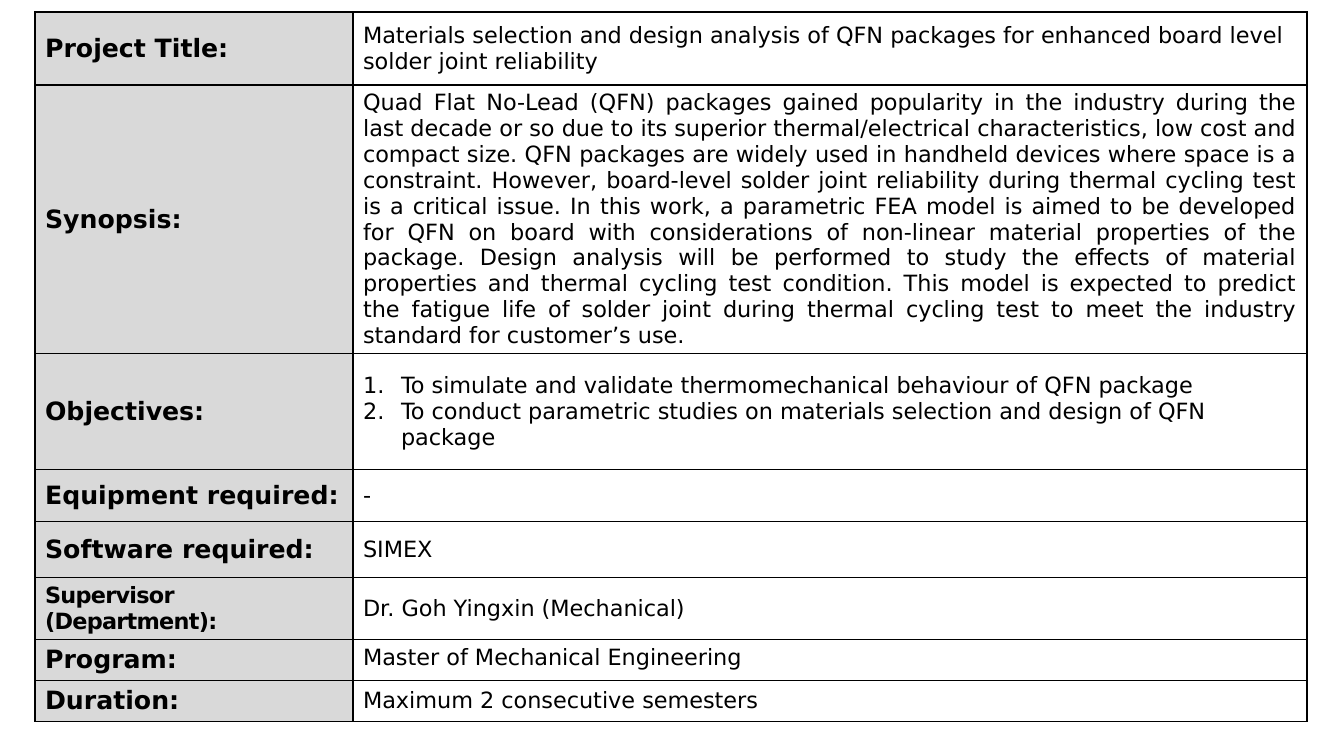
"""Build a one-slide project proposal sheet as a two-column table."""
from lxml import etree
from pptx import Presentation
from pptx.dml.color import RGBColor
from pptx.enum.text import MSO_ANCHOR, PP_ALIGN
from pptx.oxml.ns import qn
from pptx.util import Pt

MIDDLE, TOP = MSO_ANCHOR.MIDDLE, MSO_ANCHOR.TOP
LEFT, JUSTIFY = PP_ALIGN.LEFT, PP_ALIGN.JUSTIFY
PX = 914400 / 100.8
THEME = {
    "font": "DejaVu Sans",
    "ink": "000000",
    "label_fill": "D9D9D9",
    "label_size": 18,
    "body_size": 16,
    "tight": -50,
    "tight_gap": -430,
    "border": 1,
}
SYNOPSIS = (
    "Quad Flat No-Lead (QFN) packages gained popularity in the industry during the last decade or so "
    "due to its superior thermal/electrical characteristics, low cost and compact size. QFN packages "
    "are widely used in handheld devices where space is a constraint. However, board-level solder "
    "joint reliability during thermal cycling test is a critical issue. In this work, a parametric "
    "FEA model is aimed to be developed for QFN on board with considerations of non-linear material "
    "properties of the package. Design analysis will be performed to study the effects of material "
    "properties and thermal cycling test condition. This model is expected to predict the fatigue "
    "life of solder joint during thermal cycling test to meet the industry standard for customer’s use."
)
OBJECTIVES = [
    "To simulate and validate thermomechanical behaviour of QFN package",
    "To conduct parametric studies on materials selection and design of QFN package",
]
ROWS = [
    (73, "Project Title:", ["Materials selection and design analysis of QFN packages "
                            "for enhanced board level solder joint reliability"]),
    (268, "Synopsis:", [SYNOPSIS]),
    (116, "Objectives:", OBJECTIVES),
    (52, "Equipment required:", ["-"]),
    (56, "Software required:", ["SIMEX"]),
    (41, "Supervisor (Department):", ["Dr. Goh Yingxin (Mechanical)"]),
    (41, "Program:", ["Master of Mechanical Engineering"]),
    (41, "Duration:", ["Maximum 2 consecutive semesters"]),
]
COLUMNS = [318, 954]


def px(length):
    """Turn px into EMU."""
    return round(length * PX)


def write_cell(cell, lines, size, bold):
    """Fill a cell with paragraphs and draw its four borders."""
    cell.vertical_anchor = MIDDLE
    cell.text = "\n".join(lines)
    for para in cell.text_frame.paragraphs:
        para.alignment = LEFT
        para.font.name = THEME["font"]
        para.font.size = Pt(size)
        para.font.bold = bold
        para.font.color.rgb = RGBColor.from_string(THEME["ink"])
    properties = cell._tc.get_or_add_tcPr()
    for place, side in enumerate(["a:lnL", "a:lnR", "a:lnT", "a:lnB"]):
        border = etree.Element(qn(side), w=str(Pt(THEME["border"])))
        fill = etree.SubElement(border, qn("a:solidFill"))
        etree.SubElement(fill, qn("a:srgbClr"), val=THEME["ink"])
        properties.insert(place, border)


deck = Presentation()
deck.slide_width, deck.slide_height = px(1344), px(756)
page = deck.slides.add_slide(deck.slide_layouts[6])

heights = [height for height, _, _ in ROWS]
frame = page.shapes.add_table(len(ROWS), len(COLUMNS), px(35), px(12), px(sum(COLUMNS)), px(sum(heights)))
sheet = frame.table
sheet.first_row = sheet.horz_banding = False
for column, width in zip(sheet.columns, COLUMNS):
    column.width = px(width)

for row, (height, label, lines) in enumerate(ROWS):
    sheet.rows[row].height = px(height)
    label_cell, body_cell = sheet.cell(row, 0), sheet.cell(row, 1)
    write_cell(label_cell, [label], THEME["label_size"], True)
    label_cell.fill.solid()
    label_cell.fill.fore_color.rgb = RGBColor.from_string(THEME["label_fill"])
    write_cell(body_cell, lines, THEME["body_size"], False)
    body_cell.fill.background()

    if label == "Synopsis:":
        body_cell.text_frame.paragraphs[0].alignment = JUSTIFY
    elif label == "Objectives:":
        for para in body_cell.text_frame.paragraphs:
            layout = para._p.get_or_add_pPr()
            layout.set("marL", str(px(38)))
            layout.set("indent", str(px(-38)))
            numbering = etree.Element(qn("a:buAutoNum"), type="arabicPeriod")
            layout.insert(0, numbering)
    elif label == "Program:":
        body_cell.vertical_anchor = TOP
    elif label.startswith("Supervisor"):
        label_cell.margin_right = 0
        para = label_cell.text_frame.paragraphs[0]
        para.font.size = Pt(THEME["body_size"])
        first, gap, last = label.partition(" ")
        para.runs[0].text = first
        for text in (gap, last):
            para.add_run().text = text
        for span in para.runs:
            spacing = THEME["tight_gap"] if span.text == gap else THEME["tight"]
            span._r.get_or_add_rPr().set("spc", str(spacing))

deck.save("out.pptx")
